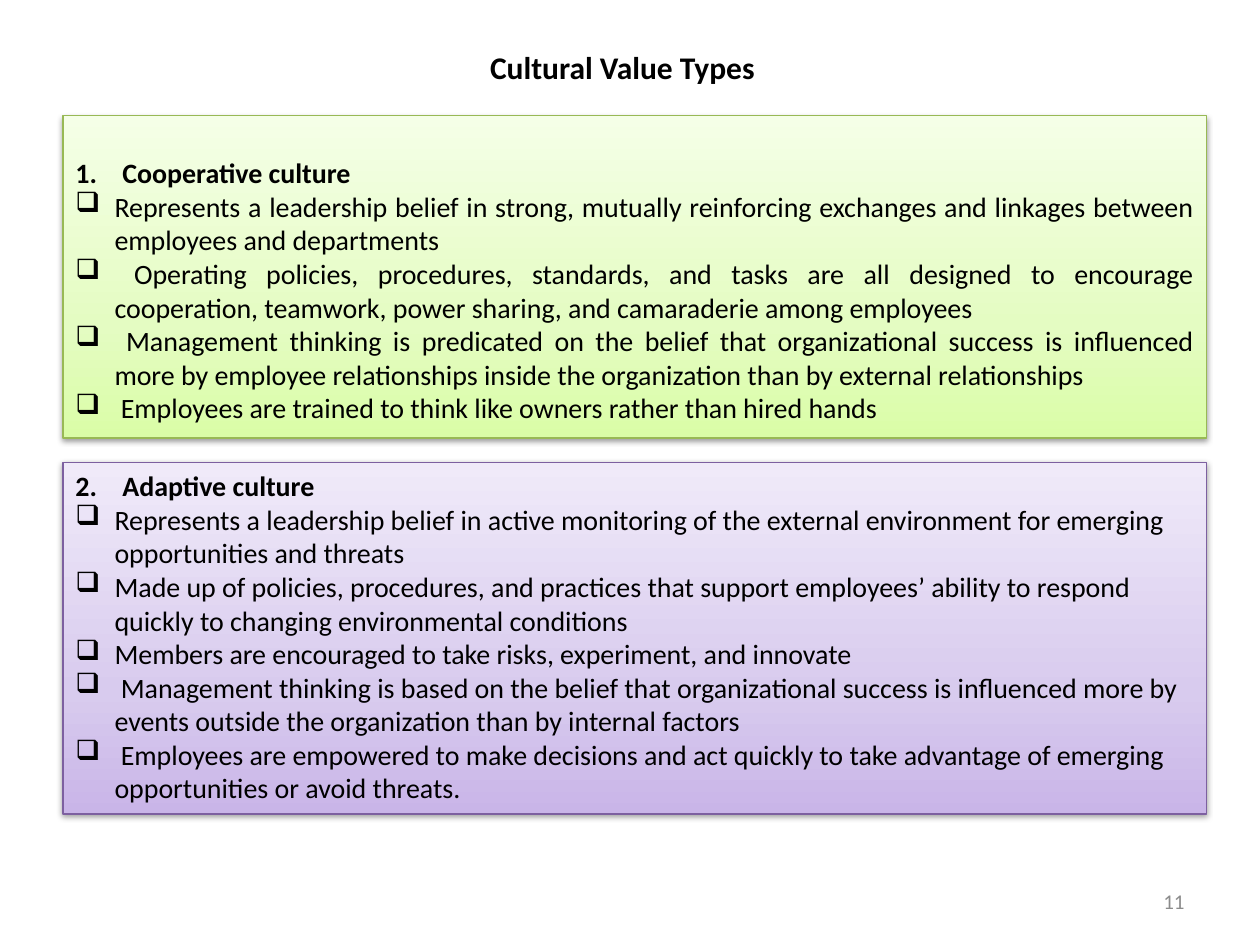
from copy import deepcopy

from lxml.etree import SubElement
from pptx import Presentation
from pptx.dml.color import RGBColor as RGB
from pptx.enum.shapes import MSO_SHAPE as SHAPE
from pptx.enum.text import MSO_ANCHOR as ANCHOR, MSO_AUTO_SIZE as FIT, PP_ALIGN as ALIGN
from pptx.oxml.ns import qn
from pptx.util import Cm, Pt

COLORS = {
    "text": "000000",
    "number": "8C8C8C",
    "green line": "98B955",
    "green": ["DAFDA7", "E4FCC2", "F5FFE7"],
    "purple line": "7D60A0",
    "purple": ["C9B5E8", "D8CBEE", "F0EAF9"],
}
STOPS = [0, 0.35, 1]

COOPERATIVE = [
    "Represents a leadership belief in strong, mutually reinforcing exchanges and linkages "
    "between employees and departments ",
    " Operating policies, procedures, standards, and tasks are all designed to encourage "
    "cooperation, teamwork, power sharing, and camaraderie among employees ",
    " Management thinking is predicated on the belief that organizational success is influenced "
    "more by employee relationships inside the organization than by external relationships ",
    " Employees are trained to think like owners rather than hired hands",
]
ADAPTIVE = [
    "Represents a leadership belief in active monitoring of the external environment for "
    "emerging opportunities and threats",
    "Made up of policies, procedures, and practices that support employees’ ability to respond "
    "quickly to changing environmental conditions",
    "Members are encouraged to take risks, experiment, and innovate",
    " Management thinking is based on the belief that organizational success is influenced more "
    "by events outside the organization than by internal factors",
    " Employees are empowered to make decisions and act quickly to take advantage of emerging "
    "opportunities or avoid threats.",
]


def set_all(target, values):
    for name, value in values.items():
        setattr(target, name, value)


class Deck:
    def __init__(self, prs, font="Calibri"):
        self.slide = prs.slides.add_slide(prs.slide_layouts[6])
        self.font = font

    def add_text(self, p, text, size, color="text", bold=False, align=ALIGN.LEFT):
        p.alignment = align
        r = p.add_run()
        r.text = text
        set_all(r.font, {"name": self.font, "size": Pt(size), "bold": bold})
        r.font.color.rgb = RGB.from_string(COLORS[color])

    def label(self, box, text, size, frame, **style):
        tf = self.slide.shapes.add_textbox(*map(Cm, box)).text_frame
        set_all(tf, frame)
        self.add_text(tf.paragraphs[0], text, size, **style)

    def bullet(self, p, indent, tag, **attrs):
        """Give p a hanging indent and the bullet element a:tag."""
        pPr = p._p.get_or_add_pPr()
        pPr.set("marL", str(Cm(indent)))
        pPr.set("indent", str(-Cm(indent)))
        bu = SubElement(pPr, qn(f"a:{tag}"))
        for name, value in attrs.items():
            bu.set(name, value)

    def gradient(self, sp, colors):
        """Fill sp from bottom to top with one colour at each of STOPS."""
        sp.fill.gradient()
        sp.fill.gradient_angle = 90
        stops = sp._element.spPr.find(qn("a:gradFill")).find(qn("a:gsLst"))
        stops.append(deepcopy(stops[-1]))
        for stop, position, color in zip(sp.fill.gradient_stops, STOPS, colors):
            stop.position = position
            stop.color.rgb = RGB.from_string(color)

    def soft_shadow(self, sp):
        sp.shadow.inherit = False
        effects = sp._element.spPr.find(qn("a:effectLst"))
        shadow = SubElement(effects, qn("a:outerShdw"), blurRad="40000", dist="20000",
                            dir="5400000", rotWithShape="0")
        color = SubElement(shadow, qn("a:srgbClr"), val="000000")
        SubElement(color, qn("a:alpha"), val="38000")

    def panel(self, top, height, hue, number, heading, points, align, inset=0.13):
        sp = self.slide.shapes.add_shape(SHAPE.RECTANGLE, Cm(1.27), Cm(top), Cm(23.06), Cm(height))
        self.gradient(sp, COLORS[hue])
        sp.line.color.rgb = RGB.from_string(COLORS[f"{hue} line"])
        sp.line.width = Pt(0.75)
        self.soft_shadow(sp)
        tf = sp.text_frame
        set_all(tf, {"word_wrap": True, "auto_size": FIT.SHAPE_TO_FIT_TEXT,
                     "vertical_anchor": ANCHOR.TOP, "margin_top": Cm(inset)})
        p = tf.paragraphs[0]
        self.bullet(p, 0.95, "buAutoNum", type="arabicPeriod", startAt=str(number))
        self.add_text(p, heading, 16, bold=True, align=align)
        for point in points:
            p = tf.add_paragraph()
            self.bullet(p, 0.79, "buChar", char="❑")
            self.add_text(p, point, 16, align=align)


def main():
    prs = Presentation()
    prs.slide_width, prs.slide_height = Cm(25.4), Cm(19.05)
    deck = Deck(prs)
    deck.label((9.63, 0.84, 6.05, 1.03), "Cultural Value Types ", 18,
               {"word_wrap": False, "auto_size": FIT.SHAPE_TO_FIT_TEXT},
               bold=True, align=ALIGN.JUSTIFY)
    deck.panel(2.33, 6.5, "green", 1, "Cooperative culture ", COOPERATIVE, ALIGN.JUSTIFY, inset=0.81)
    deck.panel(9.32, 7.09, "purple", 2, "Adaptive culture", ADAPTIVE, ALIGN.LEFT)
    deck.label((18.2, 17.66, 5.93, 1.01), "11", 12,
               {"word_wrap": True, "vertical_anchor": ANCHOR.MIDDLE},
               color="number", align=ALIGN.RIGHT)
    prs.save("out.pptx")


if __name__ == "__main__":
    main()
